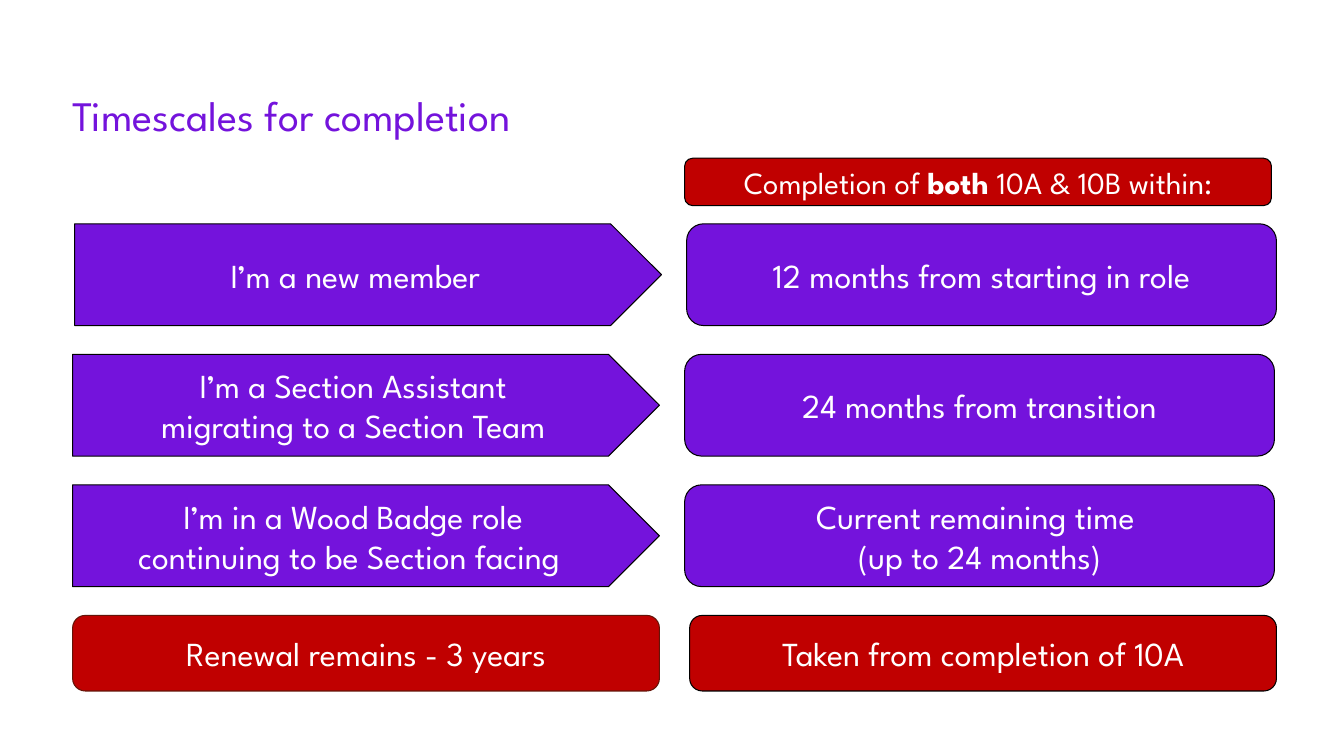
from pptx import Presentation
from pptx import util as u
from pptx.dml.color import RGBColor
from pptx.enum import shapes, text

FONT = "League Spartan"
PURPLE, RED, DARK_RED = "7413DC", "C00000", "631408"
BLACK, WHITE = "000000", "FFFFFF"
ARROW = shapes.MSO_SHAPE.PENTAGON
ROUNDED = shapes.MSO_SHAPE.FLOWCHART_ALTERNATE_PROCESS

TITLE = "Timescales for completion"
HEADING = [[("Completion of ", False), ("both ", True), ("10A & 10B within:", False)]]
# Situation, deadline, shift of the row to the right
TIMESCALES = [
    (["I’m a new member"], ["12 months from starting in role"], 0.02),
    (["I’m a Section Assistant", "migrating to a Section Team"],
     ["24 months from transition"], 0),
    (["I’m in a Wood Badge role", "continuing to be Section facing\u00a0"],
     ["Current remaining time ", "(up to 24 months)"], 0),
]
RENEWAL = ["Renewal remains - 3 years"]
RENEWAL_START = ["Taken from completion of 10A"]

LEFT, RIGHT = 0.72, 6.79
WIDTH, DEADLINE_WIDTH = 5.82, 5.85
FIRST_ROW, ROW_STEP = 2.22, 1.295
ROW_HEIGHT, RENEWAL_HEIGHT = 1.01, 0.75


def color(value):
    return RGBColor.from_string(value)


def add_run(paragraph, words, size, ink, bold=False):
    run = paragraph.add_run()
    run.text = words
    run.font.name = FONT
    run.font.size = u.Pt(size)
    run.font.bold = bold
    run.font.color.rgb = color(ink)


def plain(lines):
    """Turn lines of text into paragraphs of one regular run each."""
    return [[(line, False)] for line in lines]


def add_box(slide, kind, box, paragraphs, fill, line=BLACK, size=24):
    shape = slide.shapes.add_shape(kind, *(u.Inches(length) for length in box))
    shape.shadow.inherit = False
    shape.fill.solid()
    shape.fill.fore_color.rgb = color(fill)
    shape.line.color.rgb = color(line)
    shape.line.width = u.Pt(0.75)
    frame = shape.text_frame
    frame.word_wrap = True
    frame.vertical_anchor = text.MSO_ANCHOR.MIDDLE
    for index, runs in enumerate(paragraphs):
        paragraph = frame.add_paragraph() if index else frame.paragraphs[0]
        paragraph.alignment = text.PP_ALIGN.CENTER
        for words, bold in runs:
            add_run(paragraph, words, size, WHITE, bold)


def add_title(slide):
    box = slide.shapes.add_textbox(
        u.Inches(LEFT), u.Inches(0.89), u.Inches(7.8), u.Inches(0.5))
    frame = box.text_frame
    frame.word_wrap = True
    frame.auto_size = text.MSO_AUTO_SIZE.SHAPE_TO_FIT_TEXT
    frame.margin_left = frame.margin_right = frame.margin_top = frame.margin_bottom = 0
    add_run(frame.paragraphs[0], TITLE, 30, PURPLE)


def main():
    presentation = Presentation()
    presentation.slide_width = u.Inches(13.33)
    presentation.slide_height = u.Inches(7.5)
    slide = presentation.slides.add_slide(presentation.slide_layouts[6])

    for row, (situation, deadline, shift) in enumerate(TIMESCALES):
        top = FIRST_ROW + row * ROW_STEP
        add_box(slide, ARROW, (LEFT + shift, top, WIDTH, ROW_HEIGHT),
                plain(situation), PURPLE)
        add_box(slide, ROUNDED, (RIGHT + shift, top, DEADLINE_WIDTH, ROW_HEIGHT),
                plain(deadline), PURPLE)

    bottom = FIRST_ROW + len(TIMESCALES) * ROW_STEP
    add_box(slide, ROUNDED, (LEFT, bottom, WIDTH, RENEWAL_HEIGHT),
            plain(RENEWAL), RED, DARK_RED)
    add_box(slide, ROUNDED, (RIGHT + 0.05, bottom, WIDTH, RENEWAL_HEIGHT),
            plain(RENEWAL_START), RED)
    add_box(slide, ROUNDED, (RIGHT, 1.57, WIDTH, 0.47), HEADING, RED, size=22)
    add_title(slide)
    presentation.save("out.pptx")


if __name__ == "__main__":
    main()
